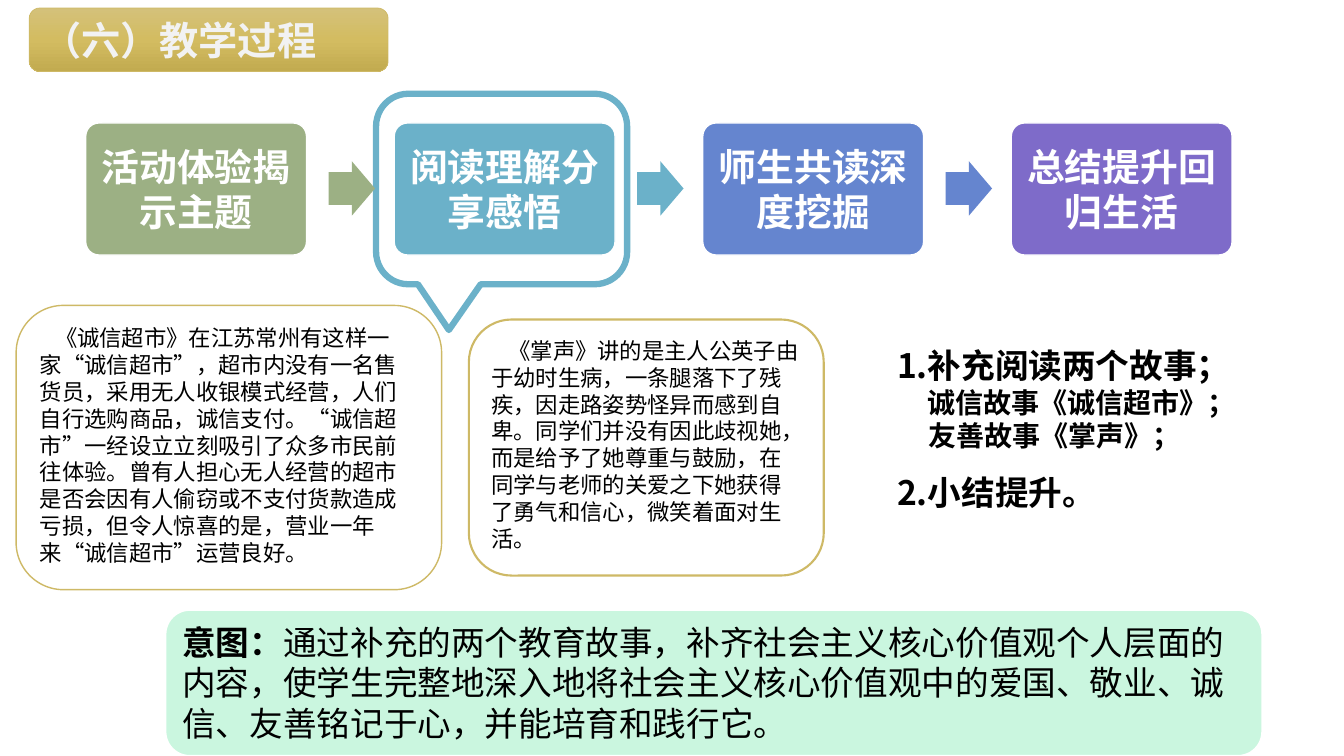
"""Build the teaching process slide."""
from copy import deepcopy

from pptx import Presentation
from pptx.dml.color import RGBColor
from pptx.enum.shapes import MSO_SHAPE as Kind
from pptx.enum.text import MSO_ANCHOR as Anchor, PP_ALIGN as Align
from pptx.oxml.ns import qn
from pptx.util import Inches, Pt

FACE = "Noto Sans CJK SC"
BLACK = RGBColor(0, 0, 0)
WHITE = RGBColor(255, 255, 255)
PALE = RGBColor(0xF2, 0xF2, 0xF2)
MINT = RGBColor(0xCA, 0xF6, 0xDF)
GOLD = RGBColor(0xCE, 0xB9, 0x66)
GREEN = RGBColor(0x9C, 0xB0, 0x84)
TEAL = RGBColor(0x6B, 0xB1, 0xC9)
BLUE = RGBColor(0x65, 0x85, 0xCF)
VIOLET = RGBColor(0x7E, 0x6B, 0xC9)
SHADES = [
    (0, RGBColor(0xD4, 0xC1, 0x7A)),
    (0.5, RGBColor(0xD3, 0xBC, 0x61)),
    (1, RGBColor(0xC2, 0xAB, 0x50)),
]
STAGES = [
    ("活动体验揭示主题", GREEN),
    ("阅读理解分享感悟", TEAL),
    ("师生共读深度挖掘", BLUE),
    ("总结提升回归生活", VIOLET),
]
MARKET = (
    "《诚信超市》在江苏常州有这样一家“诚信超市”，超市内没有一名售货员，"
    "采用无人收银模式经营，人们自行选购商品，诚信支付。“诚信超市”一经设立"
    "立刻吸引了众多市民前往体验。曾有人担心无人经营的超市是否会因有人偷窃或"
    "不支付货款造成亏损，但令人惊喜的是，营业一年来“诚信超市”运营良好。"
)
CLAP = (
    "《掌声》讲的是主人公英子由于幼时生病，一条腿落下了残疾，因走路姿势怪异而"
    "感到自卑。同学们并没有因此歧视她，而是给予了她尊重与鼓励，在同学与老师的"
    "关爱之下她获得了勇气和信心，微笑着面对生活。"
)
AIM = (
    "通过补充的两个教育故事，补齐社会主义核心价值观个人层面的内容，使学生完整地"
    "深入地将社会主义核心价值观中的爱国、敬业、诚信、友善铭记于心，并能培育和践行它。"
)
TASKS = [
    ("1.补充阅读两个故事；", 24, 1.5, 0),
    ("诚信故事《诚信超市》；", 20, 1, 0.3),
    ("友善故事《掌声》；", 20, 1, 0.31),
    ("2.小结提升。", 24, 1.5, 0),
]


def add_form(slide, kind, spot, fill=None, edge=None, width=1, adj=()):
    """Add a flat preset shape."""
    form = slide.shapes.add_shape(kind, *map(Inches, spot))
    form.shadow.inherit = False
    for i, value in enumerate(adj):
        form.adjustments[i] = value
    if fill is None:
        form.fill.background()
    else:
        form.fill.solid()
        form.fill.fore_color.rgb = fill
    if edge is None:
        form.line.fill.background()
    else:
        form.line.color.rgb = edge
        form.line.width = Pt(width)
    return form


def set_font(font, size, color, bold):
    """Set the face, size, colour and weight of a font."""
    font.name, font.size, font.bold = FACE, Pt(size), bold
    font.color.rgb = color


def add_text(form, words, size, color=BLACK, bold=False, indent=0):
    """Write one left-aligned paragraph from the top of a shape."""
    frame = form.text_frame
    frame.word_wrap = True
    frame.vertical_anchor = Anchor.TOP
    para = frame.paragraphs[0]
    para.alignment = Align.LEFT
    para.text = words
    if indent:
        para._p.get_or_add_pPr().set("indent", str(Inches(indent)))
    set_font(para.font, size, color, bold)
    return para


def add_title(slide):
    """Add the heading on its shaded bar."""
    bar = add_form(slide, Kind.ROUNDED_RECTANGLE, (0.29, 0.08, 3.56, 0.63),
                   GOLD, GOLD, 0.5)
    bar.fill.gradient()
    bar.fill.gradient_angle = 270
    last = bar._element.spPr.findall(".//" + qn("a:gs"))[-1]
    last.addnext(deepcopy(last))
    for stop, (place, color) in zip(bar.fill.gradient_stops, SHADES):
        stop.position = place
        stop.color.rgb = color
    add_text(bar, "（六）教学过程", 28, PALE, True)


def add_flow(slide):
    """Add the stages with arrows between them."""
    for i, (words, color) in enumerate(STAGES):
        left = 0.85 + 3.06 * i
        box = add_form(slide, Kind.ROUNDED_RECTANGLE, (left, 1.22, 2.19, 1.31),
                       color, WHITE, 1, [0.1])
        para = add_text(box, words, 27, WHITE, True)
        para.alignment = Align.CENTER
        frame = box.text_frame
        frame.vertical_anchor = Anchor.MIDDLE
        frame.margin_left = frame.margin_right = Inches(0.07)
        if i < len(STAGES) - 1:
            add_form(slide, Kind.RIGHT_ARROW, (left + 2.41, 1.6, 0.46, 0.54),
                     color, adj=[0.6, 0.5])


def add_tasks(slide):
    """Add the list of tasks."""
    box = slide.shapes.add_textbox(*map(Inches, (8.8, 3.17, 4.13, 2.05)))
    frame = box.text_frame
    frame.word_wrap = True
    for i, (words, size, space, indent) in enumerate(TASKS):
        para = frame.add_paragraph() if i else frame.paragraphs[0]
        para.text = words
        para.line_spacing = float(space)
        para._p.get_or_add_pPr().set("marL", str(Inches(indent)))
        set_font(para.font, size, BLACK, True)


def add_aim(slide):
    """Add the panel with the aim."""
    box = add_form(slide, Kind.ROUNDED_RECTANGLE, (1.64, 6.05, 10.88, 1.45),
                   MINT, WHITE, 1.5)
    para = add_text(box, "意图：", 24)
    para.runs[0].font.bold = True
    para.add_run().text = AIM


def add_story(slide, spot, words, width, indent):
    """Add a story in a gold outline."""
    box = add_form(slide, Kind.ROUNDED_RECTANGLE, spot, WHITE, GOLD, width)
    add_text(box, words, 16, indent=indent)


def main():
    """Build and save the slide."""
    deck = Presentation()
    deck.slide_width, deck.slide_height = Inches(13.33), Inches(7.5)
    slide = deck.slides.add_slide(deck.slide_layouts[6])
    add_aim(slide)
    add_title(slide)
    add_form(slide, Kind.ROUNDED_RECTANGULAR_CALLOUT, (3.73, 0.93, 2.49, 1.89),
             edge=TEAL, width=4.5, adj=[-0.21, 0.74, 0.17])
    add_tasks(slide)
    add_flow(slide)
    add_story(slide, (0.16, 3.03, 4.22, 2.82), MARKET, 1, 0.15)
    add_story(slide, (4.65, 3.17, 3.52, 2.54), CLAP, 1.5, 0.17)
    deck.save("out.pptx")


if __name__ == "__main__":
    main()
